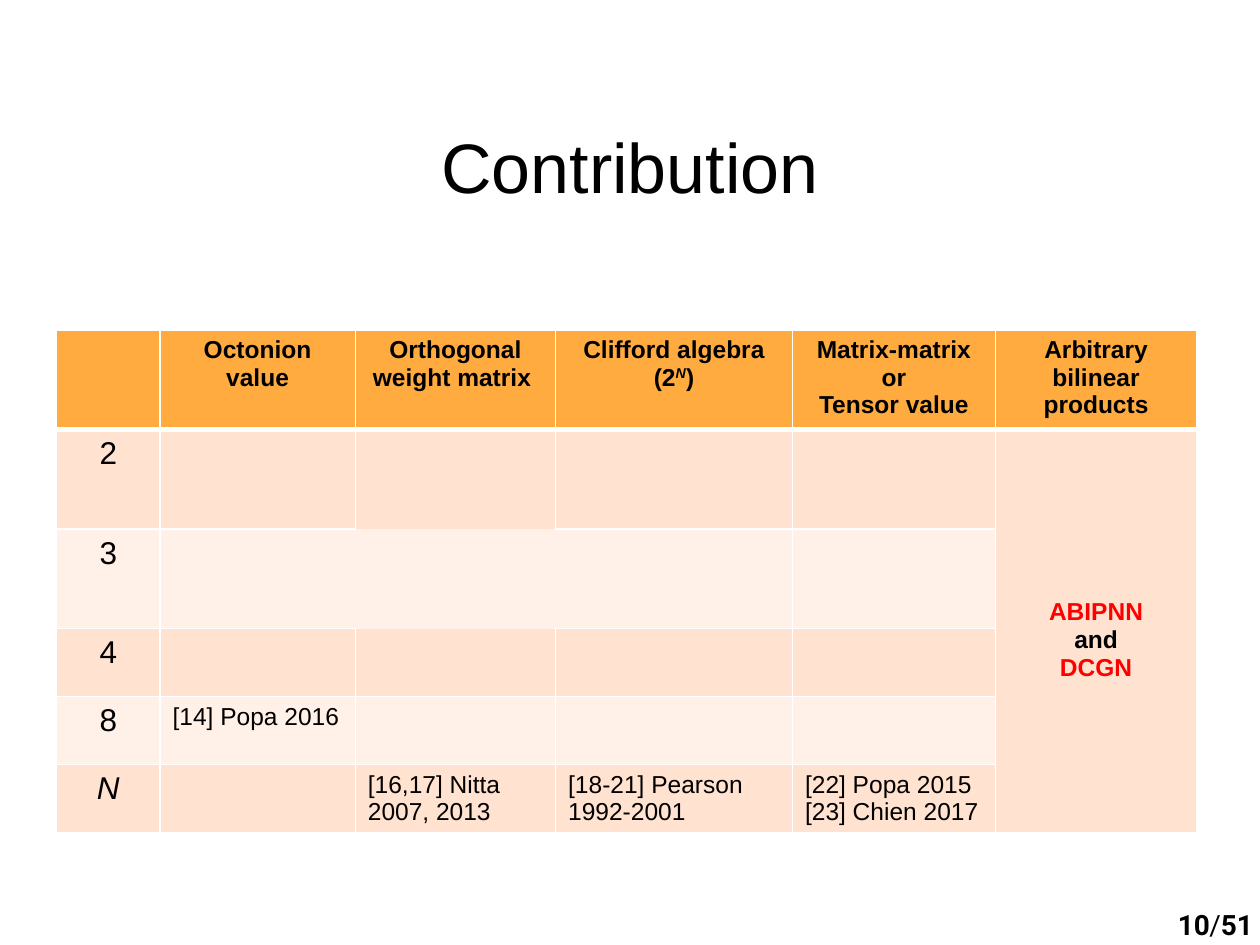
import pptx
import pptx.util
import pptx.dml.color
import pptx.enum.text
import pptx.oxml.ns
import lxml.etree
from pptx.util import Inches

COLORS = {"text": "000000", "accent": "FF0000", "header": "FFAB40",
          "dark": "FFE2CF", "light": "FFF1E8", "line": "FFFFFF"}
ALIGN = pptx.enum.text.PP_ALIGN
MIDDLE = pptx.enum.text.MSO_ANCHOR.MIDDLE


def write(frame, lines, align=ALIGN.LEFT, **look):
    """Fill a frame; a line is a string or a list of (text, format changes)."""
    for number, line in enumerate(lines):
        para = frame.paragraphs[0] if number == 0 else frame.add_paragraph()
        para.alignment = align
        for text, changes in [(line, {})] if isinstance(line, str) else line:
            form = {"size": 14, "font": "Arial", "color": "text",
                    "bold": False, "italic": False, **look, **changes}
            span = para.add_run()
            span.text = text
            span.font.size = pptx.util.Pt(form["size"])
            span.font.name = form["font"]
            span.font.bold = form["bold"]
            span.font.italic = form["italic"]
            span.font.color.rgb = pptx.dml.color.RGBColor.from_string(COLORS[form["color"]])
            if form.get("raised"):
                span.font._element.set("baseline", "30000")


def set_border(cell, side, points):
    """Draw one side of a cell, or hide it when points is 0."""
    line = lxml.etree.SubElement(cell._tc.get_or_add_tcPr(), pptx.oxml.ns.qn(f"a:ln{side}"))
    line.set("w", str(pptx.util.Pt(points)))
    if points:
        fill = lxml.etree.SubElement(line, pptx.oxml.ns.qn("a:solidFill"))
        lxml.etree.SubElement(fill, pptx.oxml.ns.qn("a:srgbClr")).set("val", COLORS["line"])
    else:
        lxml.etree.SubElement(line, pptx.oxml.ns.qn("a:noFill"))


deck = pptx.Presentation()
deck.slide_width, deck.slide_height = Inches(10), Inches(7.5)
page = deck.slides.add_slide(deck.slide_layouts[5])

# Title
title = page.shapes.title
title.left, title.top, title.width, title.height = Inches(0), Inches(0.93), Inches(10), Inches(0.77)
title.text_frame.vertical_anchor = MIDDLE
write(title.text_frame, ["Contribution"], align=ALIGN.CENTER, size=40)

# Table grid
widths = [0.82, 1.55, 1.59, 1.88, 1.61, 1.6]
heights = [0.79, 0.79, 0.79, 0.54, 0.54, 0.54]
table = page.shapes.add_table(len(heights), len(widths), Inches(0.45), Inches(2.62),
                              Inches(sum(widths)), Inches(sum(heights))).table
table.horz_banding = False
for column, width in zip(table.columns, widths):
    column.width = Inches(width)
for row, height in zip(table.rows, heights):
    row.height = Inches(height)

# Cell fills and borders; the middle of row "3" runs on without lines
hidden = {(1, 2): "B", (2, 1): "R", (2, 2): "LRTB", (2, 3): "L", (3, 2): "T"}
for row in range(len(heights)):
    for column in range(len(widths)):
        cell = table.cell(row, column)
        for side in "LRTB":
            heavy = (row == 0 and side == "B") or (row == 1 and side == "T")
            points = 0 if side in hidden.get((row, column), "") else 3 if heavy else 1
            set_border(cell, side, points)
        shade = "header" if row == 0 else "dark" if row % 2 or column == 5 else "light"
        cell.fill.solid()
        cell.fill.fore_color.rgb = pptx.dml.color.RGBColor.from_string(COLORS[shade])

# Column headings
headings = [
    ["Octonion value"],
    ["Orthogonal weight matrix "],
    [[("Clifford algebra (2", {}), ("N", {"italic": True, "raised": True}), (")", {})]],
    ["Matrix-matrix", "or", "Tensor value"],
    ["Arbitrary bilinear products"],
]
for column, lines in enumerate(headings, start=1):
    write(table.cell(0, column).text_frame, lines, align=ALIGN.CENTER, bold=True)

# Row labels
for row, label in enumerate("2348N", start=1):
    write(table.cell(row, 0).text_frame, [label], align=ALIGN.CENTER, size=18,
          italic=label == "N")

# References
references = {
    (4, 1): ["[14] Popa 2016"],
    (5, 2): ["[16,17] Nitta 2007, 2013"],
    (5, 3): ["[18-21] Pearson 1992-2001"],
    (5, 4): ["[22] Popa 2015", "[23] Chien 2017"],
}
for (row, column), lines in references.items():
    write(table.cell(row, column).text_frame, lines)

# Proposed networks, across all rows
proposal = table.cell(1, 5)
proposal.merge(table.cell(5, 5))
proposal.vertical_anchor = MIDDLE
proposal.margin_top = Inches(0.19)
write(proposal.text_frame,
      [[("ABIPNN", {"color": "accent"})], "and", [("DCGN", {"color": "accent"})]],
      align=ALIGN.CENTER, bold=True)

# Page count and page number
box = page.shapes.add_textbox(Inches(9.5), Inches(7.15), Inches(0.63), Inches(0.37))
box.text_frame.word_wrap = False
write(box.text_frame, [[("/", {}), ("51", {"bold": True})]], size=16, font="Roboto")

box = page.shapes.add_textbox(Inches(9.12), Inches(7.05), Inches(0.58), Inches(0.57))
box.text_frame.word_wrap = True
box.text_frame.vertical_anchor = MIDDLE
box.text_frame.margin_top = box.text_frame.margin_bottom = Inches(0.1)
write(box.text_frame, ["10"], align=ALIGN.RIGHT, size=16, font="Roboto", bold=True)

deck.save("out.pptx")
